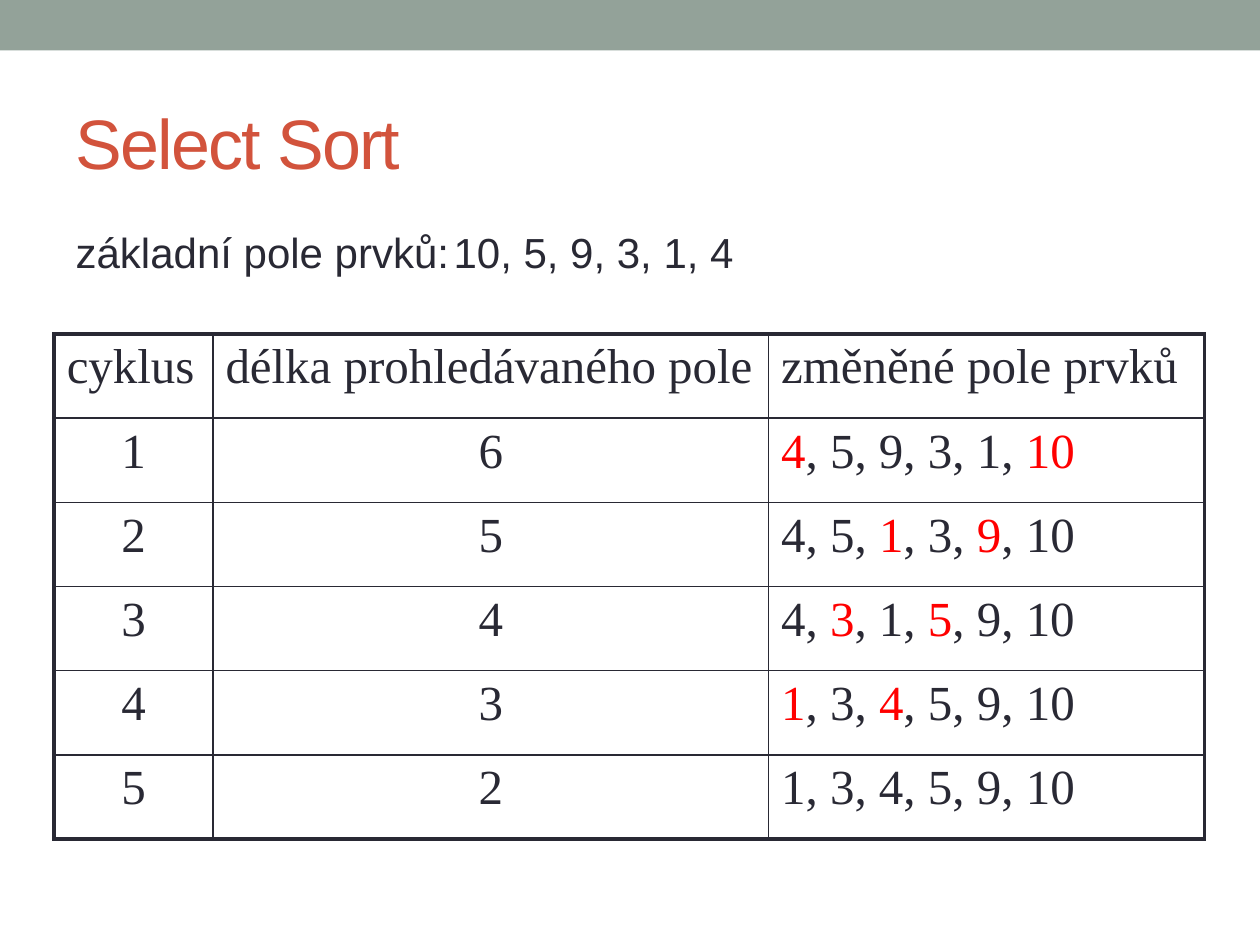
from lxml import etree
from pptx import Presentation
from pptx.dml.color import RGBColor
from pptx.enum.shapes import MSO_SHAPE
from pptx.enum.text import MSO_ANCHOR, PP_ALIGN
from pptx.oxml.ns import qn
from pptx.util import Inches, Pt

RECT = MSO_SHAPE.RECTANGLE
LEFT, CENTER = PP_ALIGN.LEFT, PP_ALIGN.CENTER
TOP, MIDDLE = MSO_ANCHOR.TOP, MSO_ANCHOR.MIDDLE
INK, RED, ORANGE, SAGE = "292934", "FF0000", "D2533C", "93A299"
THICK, THIN = 2.25, 1
COL_WIDTHS = [1.26, 4.41, 3.46]
ROWS = [
    ("cyklus", "délka prohledávaného pole", "změněné pole prvků"),
    ("1", "6", "*4*, 5, 9, 3, 1, *10*"),
    ("2", "5", "4, 5, *1*, 3, *9*, 10"),
    ("3", "4", "4, *3*, 1, *5*, 9, 10"),
    ("4", "3", "*1*, 3, *4*, 5, 9, 10"),
    ("5", "2", "1, 3, 4, 5, 9, 10"),
]


def rgb(value):
    """Turn a hex string into a colour."""
    return RGBColor.from_string(value)


def place(s, box):
    """Move a shape to a box given in inches."""
    for name, value in zip(("left", "top", "width", "height"), box):
        setattr(s, name, Inches(value))


def add_run(p, text, color, **font):
    """Add a run with the given colour and font values."""
    r = p.add_run()
    r.text = text
    r.font.color.rgb = rgb(color)
    for name, value in font.items():
        setattr(r.font, name, value)
    return r


def add_band(slide, box):
    """Draw the coloured band along the top edge."""
    s = slide.shapes.add_shape(RECT, *map(Inches, box))
    s.shadow.inherit = False
    s.fill.solid()
    s.fill.fore_color.rgb = rgb(SAGE)
    s.line.fill.background()


def add_title(slide, box, text):
    """Fill the title placeholder."""
    s = slide.shapes.title
    place(s, box)
    tf = s.text_frame
    tf.vertical_anchor = MIDDLE
    p = tf.paragraphs[0]
    p.alignment = LEFT
    r = add_run(p, text, ORANGE, name="Arial", size=Pt(40))
    r.font._element.set("spc", "-100")


def add_body(slide, box, text):
    """Fill the body placeholder with one line without a bullet."""
    s = slide.placeholders[1]
    place(s, box)
    tf = s.text_frame
    tf.vertical_anchor = TOP
    p = tf.paragraphs[0]
    add_run(p, text, INK, name="Arial", size=Pt(24))
    pPr = p._p.get_or_add_pPr()
    pPr.set("marL", "0")
    pPr.set("indent", "0")
    etree.SubElement(pPr, qn("a:buNone"))


def set_borders(cell, widths):
    """Draw the cell borders from a dict of side to width in points."""
    tcPr = cell._tc.get_or_add_tcPr()
    for side, width in widths.items():
        ln = etree.SubElement(tcPr, qn(f"a:ln{side}"), w=str(Pt(width)))
        fill = etree.SubElement(ln, qn("a:solidFill"))
        etree.SubElement(fill, qn("a:srgbClr"), val=INK)


def fill_cell(cell, text, align):
    """Write the cell text, with the parts between asterisks in red."""
    p = cell.text_frame.paragraphs[0]
    p.alignment = align
    spacing = etree.SubElement(p._p.get_or_add_pPr(), qn("a:spcBef"))
    etree.SubElement(spacing, qn("a:spcPct"), val="20000")
    for i, part in enumerate(text.split("*")):
        if part:
            add_run(p, part, RED if i % 2 else INK,
                    name="Times New Roman", size=Pt(28))


def add_sort_table(slide, box):
    """Build the table of sorting cycles with a thick outer frame."""
    last_row, last_col = len(ROWS) - 1, len(COL_WIDTHS) - 1
    table = slide.shapes.add_table(
        len(ROWS), len(COL_WIDTHS), *map(Inches, box)).table
    table.first_row = table.horz_banding = False
    for col, width in zip(table.columns, COL_WIDTHS):
        col.width = Inches(width)
    for i, row in enumerate(ROWS):
        for j, text in enumerate(row):
            cell = table.cell(i, j)
            fill_cell(cell, text, CENTER if i and j < last_col else LEFT)
            edges = {"L": j == 0, "R": j == last_col,
                     "T": i == 0, "B": i == last_row}
            set_borders(cell, {side: THICK if outer else THIN
                               for side, outer in edges.items()})
            cell.fill.background()


def main():
    """Build and save the slide."""
    prs = Presentation()
    prs.slide_width, prs.slide_height = Inches(10), Inches(7.5)
    slide = prs.slides.add_slide(prs.slide_layouts[1])
    add_band(slide, (0, 0, 10, 0.4))
    add_title(slide, (0.5, 0.58, 9, 1.08), "Select Sort")
    add_body(slide, (0.5, 1.75, 9, 0.58),
             "základní pole prvků:\t10, 5, 9, 3, 1, 4")
    add_sort_table(slide, (0.43, 2.65, sum(COL_WIDTHS), 4.01))
    prs.save("out.pptx")


if __name__ == "__main__":
    main()
